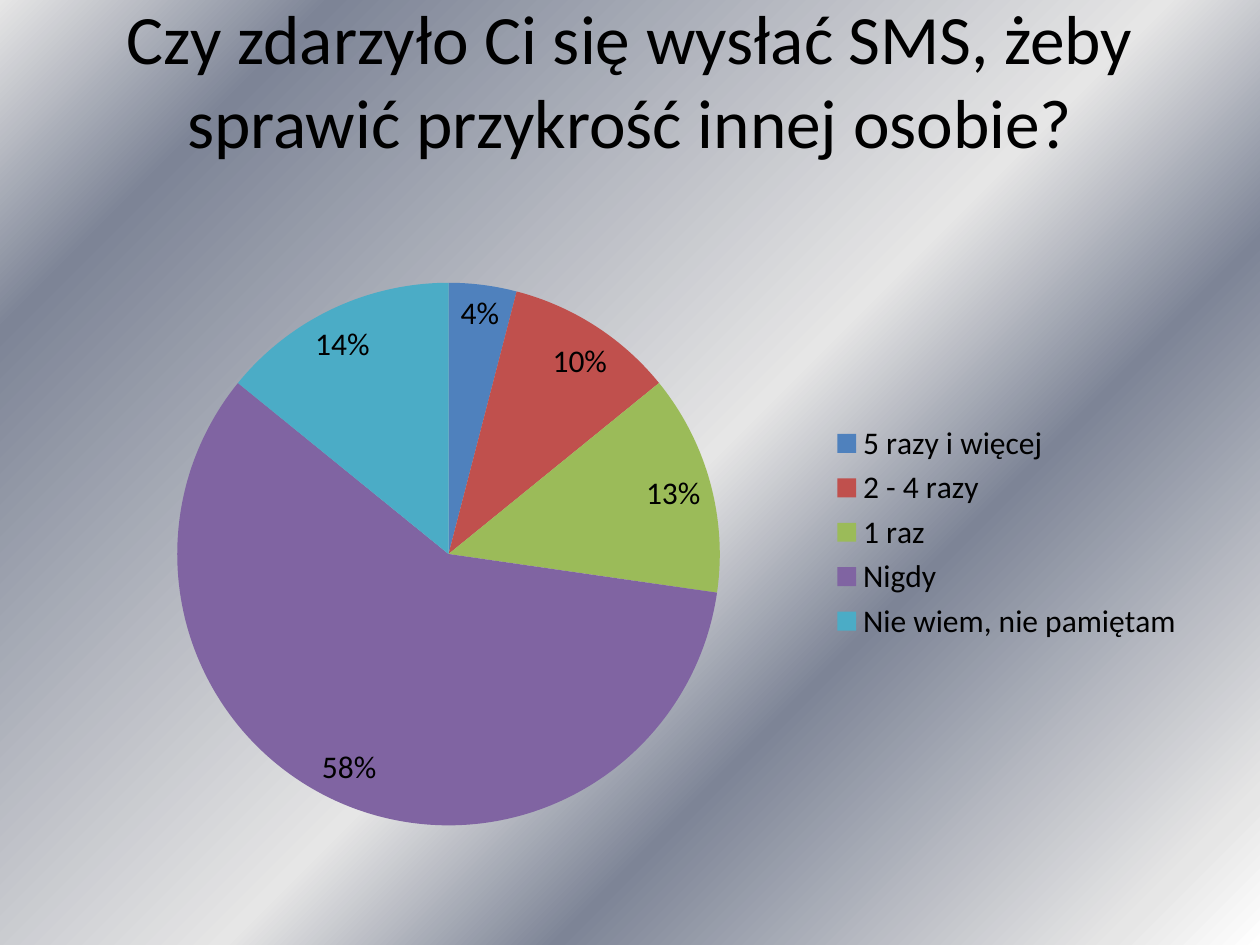
from lxml.etree import SubElement
from pptx import Presentation
from pptx.chart.data import CategoryChartData
from pptx.dml.color import RGBColor
from pptx.enum.chart import XL_CHART_TYPE, XL_LABEL_POSITION, XL_LEGEND_POSITION
from pptx.enum.text import MSO_ANCHOR, PP_ALIGN
from pptx.oxml.ns import qn
from pptx.util import Inches, Pt

BLACK = RGBColor(0x00, 0x00, 0x00)
WHITE = RGBColor(0xFF, 0xFF, 0xFF)
SILVER = RGBColor(0xE6, 0xE6, 0xE6)
STEEL = RGBColor(0x7D, 0x84, 0x96)
BLUE = RGBColor(0x4F, 0x81, 0xBD)
RED = RGBColor(0xC0, 0x50, 0x4D)
GREEN = RGBColor(0x9B, 0xBB, 0x59)
PURPLE = RGBColor(0x80, 0x64, 0xA2)
TEAL = RGBColor(0x4B, 0xAC, 0xC6)
FONT = "Calibri"

presentation = Presentation()
presentation.slide_width = Inches(10)
presentation.slide_height = Inches(7.5)
slide = presentation.slides.add_slide(presentation.slide_layouts[6])
margin = int(presentation.slide_width * 0.05)
content_width = presentation.slide_width - 2 * margin

backdrop = slide.background.fill
backdrop.gradient()
backdrop.gradient_angle = 135
stops = next(slide.element.iter(qn("a:gsLst")))
for stop in list(stops):
    stops.remove(stop)
for percent, shade in [(0, WHITE), (7, SILVER), (32, STEEL),
                       (47, SILVER), (85, STEEL), (100, SILVER)]:
    stop = SubElement(stops, qn("a:gs"), pos=str(percent * 1000))
    SubElement(stop, qn("a:srgbClr"), val=str(shade))

question = slide.shapes.add_textbox(margin, 0, content_width, Inches(1.25)).text_frame
question.word_wrap = True
question.vertical_anchor = MSO_ANCHOR.MIDDLE
heading = question.paragraphs[0]
heading.alignment = PP_ALIGN.CENTER
wording = heading.add_run()
wording.text = "Czy zdarzyło Ci się wysłać SMS, żeby sprawić przykrość innej osobie?"
wording.font.name = FONT
wording.font.size = Pt(39.6)
wording.font.color.rgb = BLACK

answers = [
    ("5 razy i więcej", 0.04, BLUE),
    ("2 - 4 razy", 0.10, RED),
    ("1 raz", 0.13, GREEN),
    ("Nigdy", 0.58, PURPLE),
    ("Nie wiem, nie pamiętam", 0.14, TEAL),
]
survey = CategoryChartData(number_format="0%")
survey.categories = [answer for answer, share, colour in answers]
survey.add_series("Series 1", [share for answer, share, colour in answers])
pie = slide.shapes.add_chart(
    XL_CHART_TYPE.PIE, margin, Inches(1.75), content_width, Inches(4.95), survey
).chart
pie.has_title = False
pie.font.name = FONT
pie.font.size = Pt(18)
pie.font.color.rgb = BLACK
pie.has_legend = True
pie.legend.position = XL_LEGEND_POSITION.RIGHT
pie.legend.include_in_layout = False

plot = pie.plots[0]
plot.vary_by_categories = True
plot.has_data_labels = True
labels = plot.data_labels
labels.show_value = True
labels.show_percentage = False
labels.number_format = "0%"
labels.number_format_is_linked = False
labels.position = XL_LABEL_POSITION.BEST_FIT
for index, (answer, share, colour) in enumerate(answers):
    slice_fill = plot.series[0].points[index].format.fill
    slice_fill.solid()
    slice_fill.fore_color.rgb = colour

plot_area = next(pie.element.iter(qn("c:plotArea")))
for layout in plot_area.findall(qn("c:layout")):
    plot_area.remove(layout)
layout = SubElement(plot_area, qn("c:layout"))
plot_area.insert(0, layout)
placement = SubElement(layout, qn("c:manualLayout"))
for tag, value in [("layoutTarget", "inner"), ("xMode", "edge"), ("yMode", "edge"),
                   ("x", "0.1"), ("y", "0.1"), ("w", "0.48"), ("h", "0.87")]:
    SubElement(placement, qn(f"c:{tag}"), val=value)

presentation.save("out.pptx")
